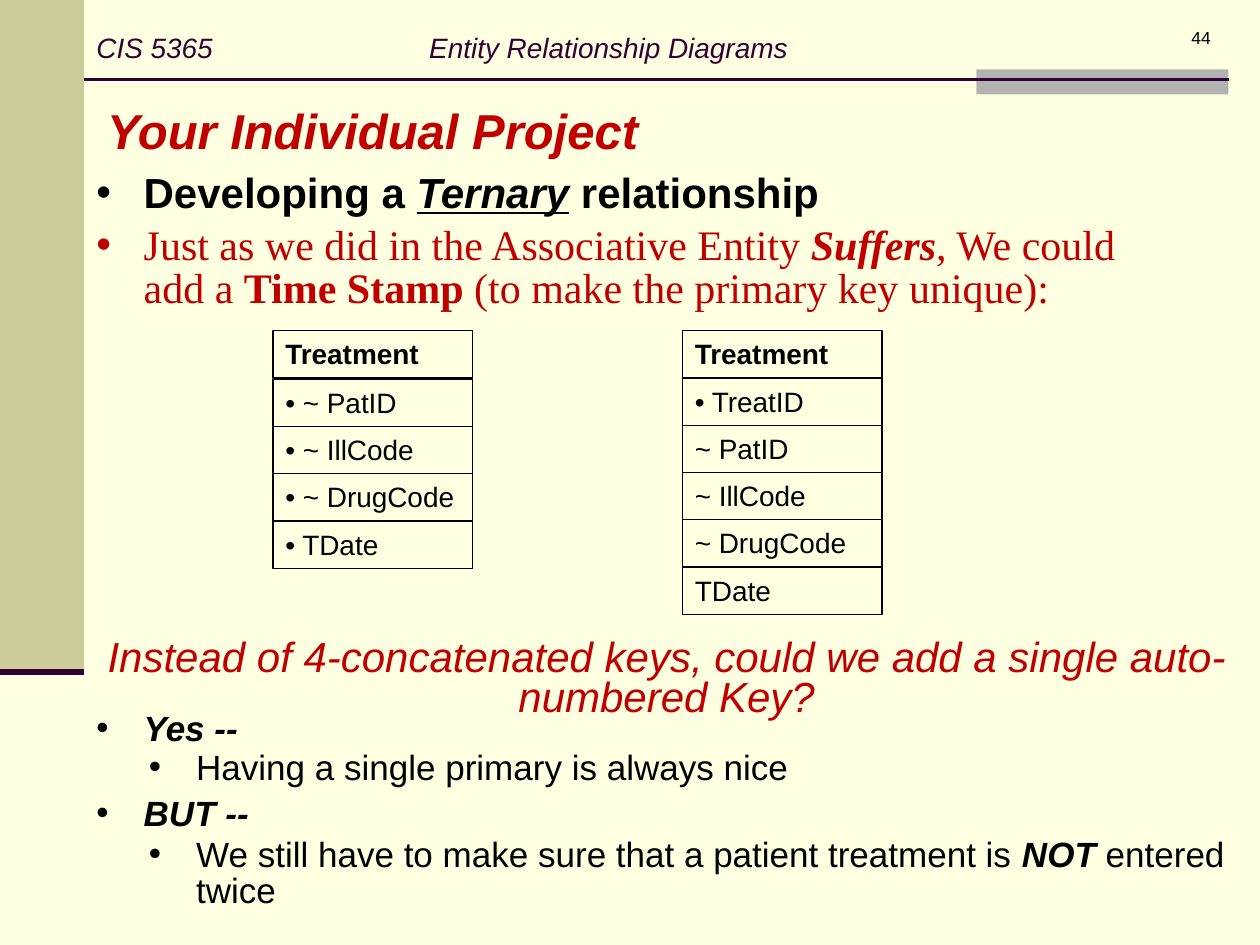
from pptx import Presentation
from pptx import util as u
from pptx.dml.color import RGBColor
from pptx.enum import shapes, text
from pptx.oxml.ns import qn
from lxml import etree

COLORS = {"paper": "FFFFE1", "olive": "CCCC99", "gray": "B2B2B2",
          "plum": "330033", "red": "C00000", "black": "000000"}
STYLES = {"b": "bold", "i": "italic", "u": "underline"}

deck = Presentation()
deck.slide_width, deck.slide_height = u.Inches(10), u.Inches(7.5)
COL, ROW = deck.slide_width / 120, deck.slide_height / 90
page = deck.slides.add_slide(deck.slide_layouts[5])
page.background.fill.solid()
page.background.fill.fore_color.rgb = RGBColor.from_string(COLORS["paper"])


def grid(left, top, width, height):
    """Turn columns and rows of the 120 x 90 grid into lengths."""
    return [round(n * unit) for n, unit in zip((left, top, width, height), (COL, ROW) * 2)]


def write(box, spans, size, color="black", font="Arial", bullet=False, tab=None,
          frame_format=None, para_format=None):
    """Fill a box with one paragraph of (text, style letters) spans."""
    frame = box.text_frame
    frame_values = {"word_wrap": True, "auto_size": text.MSO_AUTO_SIZE.NONE,
                    "vertical_anchor": text.MSO_ANCHOR.TOP, **(frame_format or {})}
    for name, value in frame_values.items():
        setattr(frame, name, value)
    para = frame.paragraphs[0]
    para_values = {"alignment": text.PP_ALIGN.LEFT, "space_before": u.Pt(0),
                   **(para_format or {})}
    for name, value in para_values.items():
        setattr(para, name, value)
    props = para._p.get_or_add_pPr()
    if bullet:
        props.set("marL", str(round(4.5 * COL)))
        props.set("indent", str(round(-4.5 * COL)))
        etree.SubElement(props, qn("a:buFont"), typeface="Arial")
        etree.SubElement(props, qn("a:buChar"), char="•")
    if tab:
        stops = etree.SubElement(props, qn("a:tabLst"))
        etree.SubElement(stops, qn("a:tab"), pos=str(round(tab * COL)), algn="l")
    for words, style in spans:
        span = para.add_run()
        span.text = words
        font_values = {"name": font, "size": u.Pt(size),
                       **{name: letter in style for letter, name in STYLES.items()}}
        for name, value in font_values.items():
            setattr(span.font, name, value)
        span.font.color.rgb = RGBColor.from_string(COLORS[color])


# Side band and header accent
for place, color in [((0, 0, 8, 64), "olive"), ((93, 6.6, 24, 2.4), "gray")]:
    band = page.shapes.add_shape(shapes.MSO_SHAPE.RECTANGLE, *grid(*place))
    band.shadow.inherit = False
    band.fill.solid()
    band.fill.fore_color.rgb = RGBColor.from_string(COLORS[color])
    band.line.fill.background()

# Rules under the header and the side band
for start, end, row, weight in [(8, 117, 7.6, 1.5), (0, 8, 64, 3.5)]:
    rule = page.shapes.add_connector(shapes.MSO_CONNECTOR.STRAIGHT,
                                     *grid(start, row, end, row))
    rule.line.color.rgb = RGBColor.from_string(COLORS["plum"])
    rule.line.width = u.Pt(weight)
    etree.SubElement(rule._element.spPr, qn("a:effectLst"))

# Title
title = page.shapes.title
title.left, title.top, title.width, title.height = grid(9, 9, 63, 6.8)
write(title, [("Your Individual Project", "bi")], 28, "red")

# Header, page number, question and bullets
bulleted = {"bullet": True, "para_format": {"line_spacing": 0.85}}
texts = [
    ((8, 0, 110, 9), [("CIS 5365\tEntity Relationship Diagrams", "i")],
     {"size": 16, "color": "plum", "tab": 31.7,
      "frame_format": {"vertical_anchor": text.MSO_ANCHOR.MIDDLE}}),
    ((91.5, 2, 25, 6), [("44", "")],
     {"size": 10, "para_format": {"alignment": text.PP_ALIGN.RIGHT}}),
    ((8, 16, 112, 5.3),
     [("Developing a ", "b"), ("Ternary", "biu"), (" relationship", "b")],
     {"size": 24, **bulleted}),
    ((8, 21, 106, 9.5),
     [("Just as we did in the Associative Entity ", ""), ("Suffers", "bi"),
      (", We could add a ", ""), ("Time Stamp ", "b"),
      ("(to make the primary key unique):", "")],
     {"size": 24, "color": "red", "font": "Times New Roman", **bulleted}),
    ((7, 60.4, 113, 9),
     [("Instead of 4-concatenated keys, could we add a single auto-numbered Key?", "i")],
     {"size": 24, "color": "red",
      "para_format": {"alignment": text.PP_ALIGN.CENTER, "line_spacing": u.Pt(23)}}),
    ((8, 67.3, 112, 4.7), [("Yes --", "bi")], {"size": 20, **bulleted}),
    ((13, 71, 107, 4.7), [("Having a single primary is always nice", "")],
     {"size": 20, **bulleted}),
    ((8, 75.4, 112, 4.7), [("BUT --", "bi")], {"size": 20, **bulleted}),
    ((13, 79.3, 107, 8),
     [("We still have to make sure that a patient treatment is ", ""),
      ("NOT", "bi"), (" entered twice", "")], {"size": 20, **bulleted}),
]
for place, spans, options in texts:
    write(page.shapes.add_textbox(*grid(*place)), spans, **options)

# Entity boxes: a heading cell over one cell per field
CELL_WIDTH, CELL_HEIGHT = 19, 4.5
entities = [
    (26, 0.12, ["• ~ PatID", "• ~ IllCode", "• ~ DrugCode", "• TDate"]),
    (65, 0, ["• TreatID", "~ PatID", "~ IllCode", "~ DrugCode", "TDate"]),
]
for left, heading_gap, fields in entities:
    for index, label in enumerate(["Treatment"] + fields):
        top = 31.5 + index * CELL_HEIGHT + (heading_gap if index else 0)
        cell = page.shapes.add_shape(shapes.MSO_SHAPE.RECTANGLE,
                                     *grid(left, top, CELL_WIDTH, CELL_HEIGHT))
        cell.shadow.inherit = False
        cell.fill.background()
        cell.line.color.rgb = RGBColor.from_string(COLORS["black"])
        cell.line.width = u.Pt(0.75)
        write(cell, [(label, "" if index else "b")], 16,
              frame_format={"margin_left": u.Inches(0.1), "margin_right": 0})

deck.save("out.pptx")
